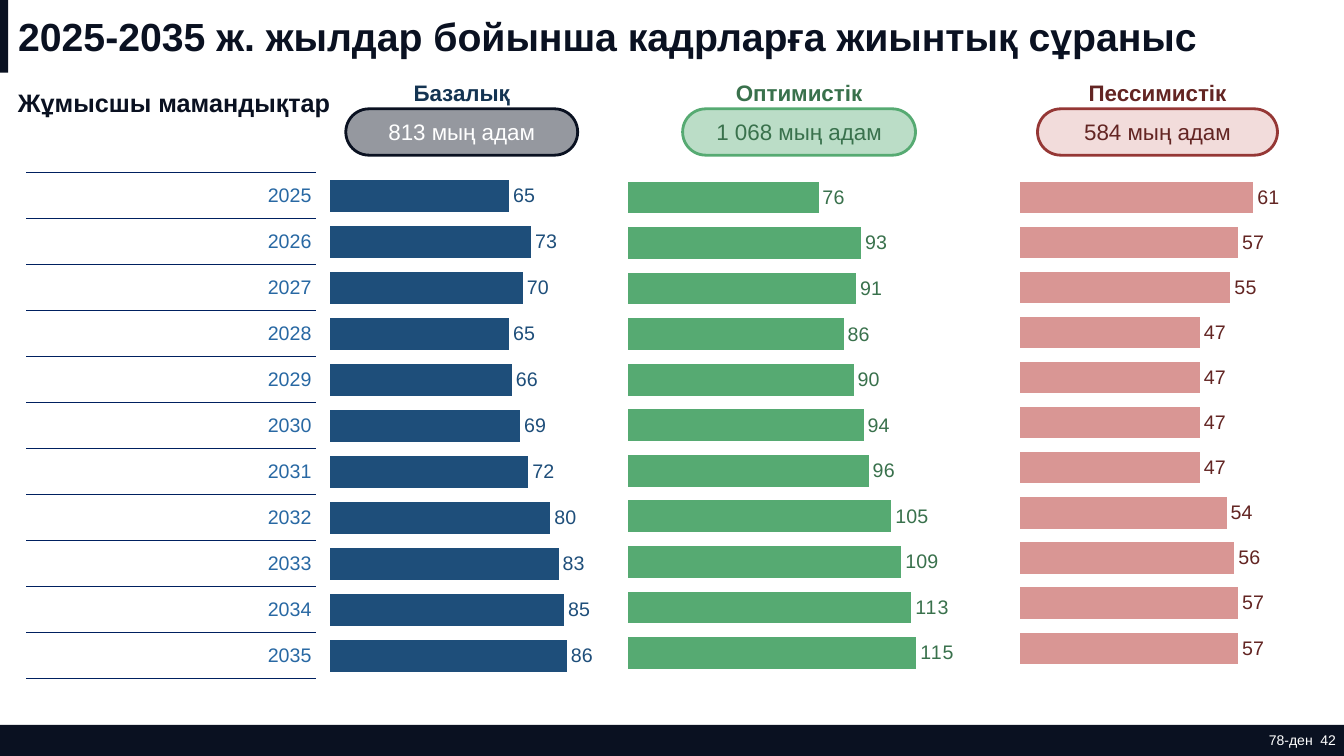
from lxml import etree
from pptx import Presentation
from pptx.chart.data import CategoryChartData
from pptx.dml.color import RGBColor
from pptx.enum import chart as ch, shapes, text
from pptx.oxml import parse_xml
from pptx.oxml.ns import nsdecls, qn
from pptx.util import Inches, Pt

NAVY = "0A1121"
WHITE = "FFFFFF"
LEFT, MID, RIGHT = text.PP_ALIGN.LEFT, text.PP_ALIGN.CENTER, text.PP_ALIGN.RIGHT


def rgb(color):
    """Turn a hex string into a colour."""
    return RGBColor.from_string(color)


def style(font, size, color, bold=False):
    """Set the face, size and colour of a font."""
    font.name, font.size, font.bold = "Arial", Pt(size), bold
    font.color.rgb = rgb(color)


def write(frame, words, size, color, bold=False, align=LEFT):
    """Put one middle-anchored line of text into a frame."""
    frame.text = words
    frame.word_wrap = True
    frame.auto_size = text.MSO_AUTO_SIZE.NONE
    frame.vertical_anchor = text.MSO_ANCHOR.MIDDLE
    para = frame.paragraphs[0]
    para.alignment = align
    style(para.runs[0].font, size, color, bold)


def label(slide, box, *args, **more):
    """Add a text box and return its frame."""
    frame = slide.shapes.add_textbox(*map(Inches, box)).text_frame
    write(frame, *args, **more)
    return frame


def block(slide, box, fill, kind=shapes.MSO_SHAPE.RECTANGLE, line=None):
    """Add a flat filled shape."""
    shape = slide.shapes.add_shape(kind, *map(Inches, box))
    shape.shadow.inherit = False
    shape.fill.solid()
    shape.fill.fore_color.rgb = rgb(fill)
    if line:
        shape.line.color.rgb = rgb(line)
        shape.line.width = Pt(2)
    else:
        shape.line.fill.background()
    return shape


def header(slide, box):
    """Place the title with its accent bar."""
    x, y, w, h = box
    block(slide, (x, y, 0.08, h), NAVY)
    title = slide.shapes.title
    title.left, title.top, title.width, title.height = map(
        Inches, (x + 0.08, y, w - 0.08, h))
    write(title.text_frame, "2025-2035 ж. жылдар бойынша кадрларға жиынтық сұраныс",
          28, NAVY, True)


def footer(slide, box):
    """Place the bottom band with the page number."""
    x, y, w, h = box
    block(slide, box, NAVY)
    frame = label(slide, (x + w - 1.29, y, 1.21, h), "78-ден  42", 10, WHITE, align=RIGHT)
    frame.margin_right = 0


def edge(cell):
    """Rule a cell above and below only."""
    props = cell._tc.get_or_add_tcPr()
    line = f'<a:solidFill {nsdecls("a")}><a:srgbClr val="002060"/></a:solidFill>'
    for spot, side in enumerate(("lnL", "lnR", "lnT", "lnB")):
        paint = line if spot > 1 else "<a:noFill/>"
        props.insert(spot, parse_xml(
            f'<a:{side} {nsdecls("a")} w="3175">{paint}</a:{side}>'))


def years(slide, box):
    """Place the ruled column of years."""
    span = range(2025, 2036)
    table = slide.shapes.add_table(len(span), 1, *map(Inches, box)).table
    table.first_row = table.horz_banding = False
    for row, year in enumerate(span):
        table.rows[row].height = Inches(box[3] / len(span))
        cell = table.cell(row, 0)
        cell.margin_left, cell.margin_right = Inches(0.01), Inches(0.04)
        cell.margin_top = cell.margin_bottom = 0
        write(cell.text_frame, str(year), 14, "2868A3", align=RIGHT)
        cell.vertical_anchor = text.MSO_ANCHOR.MIDDLE
        cell.fill.background()
        edge(cell)


def layout(chart, plot):
    """Fix the inner plot area as fractions of the chart."""
    area = chart._chartSpace.find(".//" + qn("c:plotArea"))
    for old in area.findall(qn("c:layout")):
        area.remove(old)
    node = etree.Element(qn("c:layout"))
    area.insert(0, node)
    hand = etree.SubElement(node, qn("c:manualLayout"))
    pairs = [("layoutTarget", "inner"), ("xMode", "edge"), ("yMode", "edge")]
    for tag, val in pairs + list(zip("xywh", plot)):
        etree.SubElement(hand, qn("c:" + tag)).set("val", str(val))


def bars(slide, box, vals, top, plot, fill, ink):
    """Place a bar chart whose first value is the top bar."""
    data = CategoryChartData(number_format="#,##0")
    data.categories = [str(n + 1) for n in range(len(vals))]
    data.add_series("Series 1", vals[::-1])
    chart = slide.shapes.add_chart(
        ch.XL_CHART_TYPE.BAR_CLUSTERED, *map(Inches, box), data).chart
    chart.has_legend = chart.has_title = False
    style(chart.font, 10, "000000")
    for axis in (chart.category_axis, chart.value_axis):
        axis.has_major_gridlines = False
        axis.visible = False
    chart.value_axis.minimum_scale, chart.value_axis.maximum_scale = 0, top
    bar = chart.plots[0]
    bar.gap_width, bar.vary_by_categories = 44, False
    series = bar.series[0]
    series.format.fill.solid()
    series.format.fill.fore_color.rgb = rgb(fill)
    marks = series.data_labels
    marks.show_value = True
    marks.position = ch.XL_LABEL_POSITION.OUTSIDE_END
    marks.number_format, marks.number_format_is_linked = "#,##0", False
    style(marks.font, 14, ink)
    layout(chart, plot)


def badge(slide, box, name, total, ink, fill, line, font, alpha=None):
    """Place a scenario name above its rounded total."""
    x, y, w, h = box
    label(slide, (x, y - 0.39, w, h), name, 16, ink, True, MID)
    pill = block(slide, box, fill, shapes.MSO_SHAPE.ROUNDED_RECTANGLE, line)
    pill.adjustments[0] = 0.5
    write(pill.text_frame, total, 16, font, align=MID)
    if alpha:
        tint = pill._element.spPr.find(qn("a:solidFill"))[0]
        etree.SubElement(tint, qn("a:alpha")).set("val", str(alpha * 1000))


def main():
    """Build the slide and save it."""
    deck = Presentation()
    deck.slide_width, deck.slide_height = Inches(13.33), Inches(7.5)
    slide = deck.slides.add_slide(deck.slide_layouts[5])
    footer(slide, (0, 7.19, 13.33, 0.31))
    header(slide, (0, 0, 13.33, 0.72))
    years(slide, (0.26, 1.71, 2.87, 5.02))
    label(slide, (0.08, 0.77, 3.37, 0.5), "Жұмысшы мамандықтар", 18, NAVY, True)
    bars(slide, (3.19, 1.54, 2.87, 5.3), (65, 73, 70, 65, 66, 69, 72, 80, 83, 85, 86),
         90, (0.029, 0.033, 0.857, 0.947), "1E4E7A", "1E4E7A")
    bars(slide, (6.12, 1.54, 3.64, 5.27), (76, 93, 91, 86, 90, 94, 96, 105, 109, 113, 115),
         140, (0.029, 0.037, 0.958, 0.943), "56AA72", "39714C")
    bars(slide, (10.03, 1.54, 2.97, 5.22), (61, 57, 55, 47, 47, 47, 47, 54, 56, 57, 57),
         70, (0.029, 0.037, 0.895, 0.943), "D99694", "632523")
    badge(slide, (3.43, 1.08, 2.3, 0.46), "Базалық", "813 мың адам",
          "143452", NAVY, NAVY, WHITE, 43)
    badge(slide, (6.77, 1.08, 2.31, 0.46), "Оптимистік", "1 068 мың адам",
          "39714C", "BBDDC7", "56AA72", "39714C")
    badge(slide, (10.29, 1.08, 2.38, 0.46), "Пессимистік", "584 мың адам",
          "632523", "F2DCDB", "953735", "632523")
    deck.save("out.pptx")


if __name__ == "__main__":
    main()
